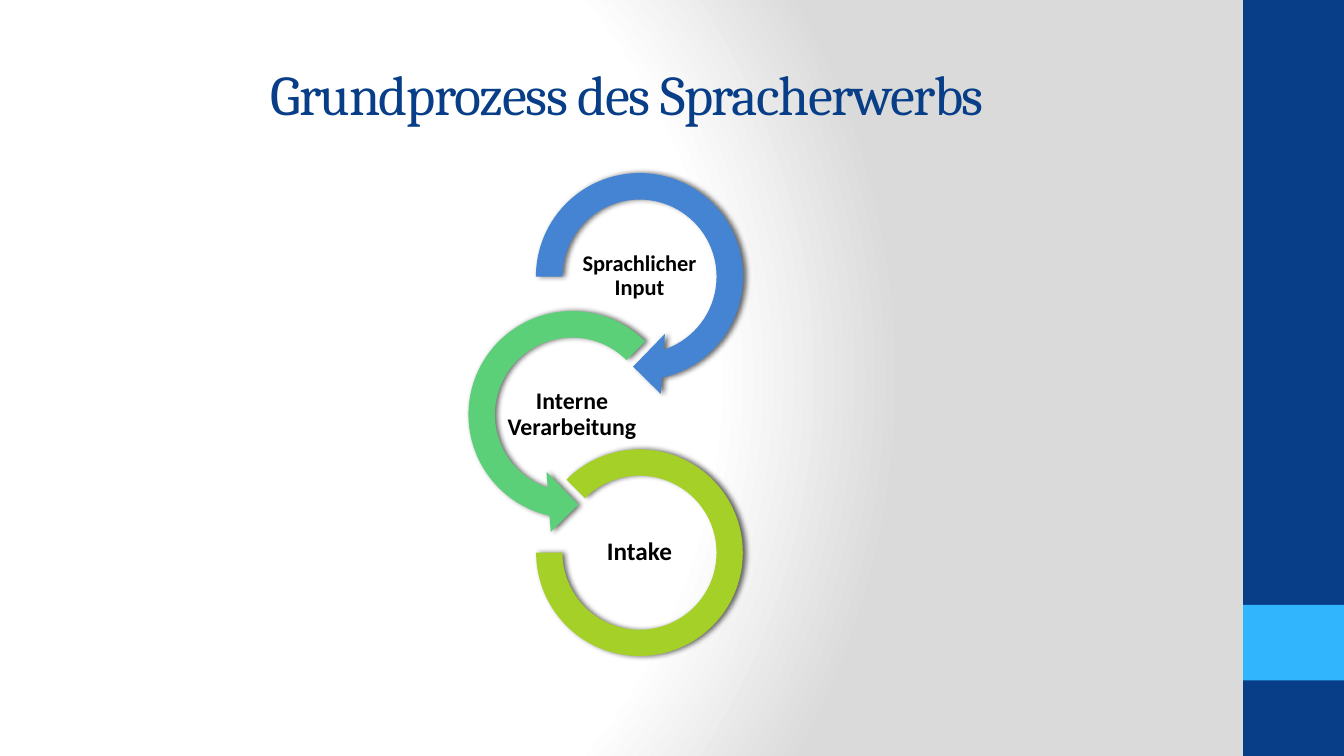
from dataclasses import dataclass

from lxml import etree
from pptx import Presentation
from pptx.dml.color import RGBColor
from pptx.enum.shapes import MSO_SHAPE
from pptx.enum.text import MSO_ANCHOR, PP_ALIGN
from pptx.oxml import parse_xml
from pptx.util import Pt

RECTANGLE = MSO_SHAPE.RECTANGLE
RIGHT_ARROW = MSO_SHAPE.CIRCULAR_ARROW
LEFT_ARROW = MSO_SHAPE.LEFT_CIRCULAR_ARROW
ARC = MSO_SHAPE.BLOCK_ARC
MIDDLE = MSO_ANCHOR.MIDDLE
CENTER = PP_ALIGN.CENTER
DRAWING = "http://schemas.openxmlformats.org/drawingml/2006/main"


@dataclass(frozen=True)
class Theme:
    navy: str = "073E87"
    sky: str = "31B6FD"
    blue: str = "4584D3"
    green: str = "5BD078"
    lime: str = "A5D028"
    black: str = "000000"
    white: str = "FFFFFF"
    grey: str = "DADADA"
    title_font: str = "Cambria"
    label_font: str = "Calibri"
    title_size: int = 40
    label_sizes: tuple = (16, 17, 18)


THEME = Theme()

# Shape, diameter, adjustments, colour and label of each step
STEPS = [
    (RIGHT_ARROW, 172, (0.11, 11.42, 45, 108, 0.125), THEME.blue, "Sprachlicher Input"),
    (LEFT_ARROW, 172, (0.11, 11.42, 63, 189, 0.125), THEME.green, "Interne Verarbeitung"),
    (ARC, 147.6, (135, 108, 0.127), THEME.lime, "Intake"),
]


def add_filled_shape(slide, kind, box, color):
    shape = slide.shapes.add_shape(kind, *(Pt(length) for length in box))
    shape.shadow.inherit = False
    shape.fill.solid()
    shape.fill.fore_color.rgb = RGBColor.from_string(color)
    shape.line.fill.background()
    return shape


def set_font(paragraph, name, size, color, bold=False):
    paragraph.alignment = CENTER
    font = paragraph.font
    font.name, font.size, font.bold = name, Pt(size), bold
    font.color.rgb = RGBColor.from_string(color)


def add_background(slide):
    slide.background.fill.gradient()
    gradient = slide.element.find(f".//{{{DRAWING}}}gradFill")
    stops = "".join(
        f'<a:gs pos="{position * 1000}"><a:srgbClr val="{color}"/></a:gs>'
        for position, color in ((0, THEME.white), (75, THEME.white), (100, THEME.grey))
    )
    gradient.getparent().replace(gradient, parse_xml(
        f'<a:gradFill xmlns:a="{DRAWING}" rotWithShape="1"><a:gsLst>{stops}</a:gsLst>'
        '<a:path path="circle"><a:fillToRect l="20000" t="50000" r="100000" b="50000"/>'
        '</a:path></a:gradFill>'
    ))


def add_side_band(slide, left, top, width, height):
    add_filled_shape(slide, RECTANGLE, (left, top, width, height), THEME.navy)
    accent = (left, top + height * 0.8, width, height * 0.1)
    add_filled_shape(slide, RECTANGLE, accent, THEME.sky)


def add_title(slide, left, top, width, height):
    title = slide.shapes.title
    title.left, title.top, title.width, title.height = map(Pt, (left, top, width, height))
    title.text_frame.text = "Grundprozess des Spracherwerbs"
    title.text_frame.vertical_anchor = MIDDLE
    paragraph = title.text_frame.paragraphs[0]
    set_font(paragraph, THEME.title_font, THEME.title_size, THEME.navy)
    # Tighter letter spacing
    paragraph.runs[0].font._element.set("spc", "-100")


def add_shadow(shape):
    effects = shape.element.spPr.find(f"{{{DRAWING}}}effectLst")
    shadow = etree.SubElement(effects, f"{{{DRAWING}}}outerShdw", blurRad=str(Pt(4)),
                              dist=str(Pt(2)), dir="0", rotWithShape="0")
    color = etree.SubElement(shadow, f"{{{DRAWING}}}srgbClr", val=THEME.black)
    etree.SubElement(color, f"{{{DRAWING}}}alpha", val="60000")


def add_label(slide, center_x, center_y, text, size):
    width, height = 95.8, 47.5
    label = slide.shapes.add_textbox(Pt(center_x - width / 2), Pt(center_y - height / 2),
                                     Pt(width), Pt(height))
    frame = label.text_frame
    frame.word_wrap = True
    frame.vertical_anchor = MIDDLE
    frame.margin_left = frame.margin_right = Pt(0.8)
    frame.margin_top = frame.margin_bottom = Pt(0.8)
    frame.text = text
    paragraph = frame.paragraphs[0]
    paragraph.line_spacing = 0.9
    set_font(paragraph, THEME.label_font, size, THEME.black, bold=True)


def add_process(slide, left, top, width):
    """Chain of rings that swing between the right and left of the box."""
    diameter, step = 172, 98.6
    for index, (kind, size, adjustments, color, text) in enumerate(STEPS):
        center_x = left + diameter / 2 if index % 2 else left + width - diameter / 2
        center_y = top + diameter / 2 + index * step
        box = (center_x - size / 2, center_y - size / 2, size, size)
        ring = add_filled_shape(slide, kind, box, color)
        for position, value in enumerate(adjustments):
            ring.adjustments[position] = value
        add_shadow(ring)
        add_label(slide, center_x, center_y, text, THEME.label_sizes[index])


def main():
    presentation = Presentation()
    presentation.slide_width, presentation.slide_height = Pt(960), Pt(540)
    slide = presentation.slides.add_slide(presentation.slide_layouts[5])
    add_background(slide)
    add_side_band(slide, 888, 0, 72, 540)
    add_title(slide, 48, 21.6, 800, 90)
    add_process(slide, 322.6, 111.6, 220.2)
    presentation.save("out.pptx")


if __name__ == "__main__":
    main()
